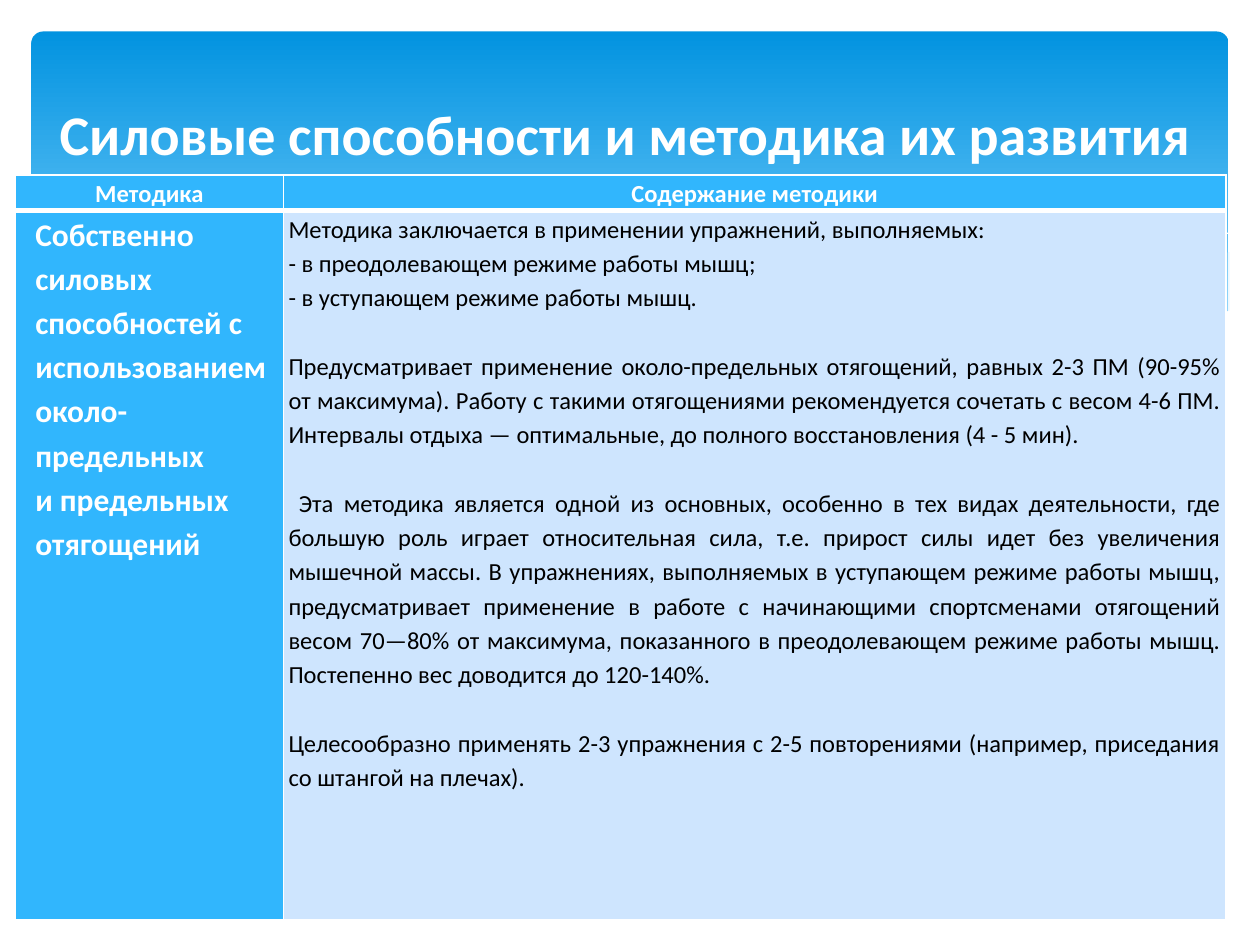
from dataclasses import dataclass

from lxml import etree
from pptx import Presentation
from pptx import util as u
from pptx.dml.color import RGBColor
from pptx.enum import shapes, text
from pptx.oxml.ns import qn


@dataclass(frozen=True)
class Theme:
    font: str = "Calibri"
    white: str = "FFFFFF"
    black: str = "000000"
    banner_top: str = "0293E0"
    banner_bottom: str = "83D3FE"
    wave: str = "C6E7FC"
    accent: str = "31B6FD"
    pale: str = "CEE5FE"
    title_size: float = 32
    method_size: float = 18
    body_size: float = 14
    line_spacing: float = 1.15
    section_gap: float = 19.6


THEME = Theme()
WIDTH, HEIGHT = 10, 7.5

# Content
TITLE = "Силовые способности и методика их развития"
HEADERS = ["Методика", "Содержание методики"]
METHOD = [
    "Собственно силовых способностей с использованием около-предельных",
    "и предельных отягощений",
]
SECTIONS = [
    ["Методика заключается в применении упражнений, выполняемых:",
     "- в преодолевающем режиме работы мышц;",
     "- в уступающем режиме работы мышц."],
    ["Предусматривает применение около-предельных отягощений, равных 2-3 ПМ "
     "(90-95% от максимума). Работу с такими отягощениями рекомендуется сочетать "
     "с весом 4-6 ПМ. Интервалы отдыха — оптимальные, до полного восстановления "
     "(4 - 5 мин)."],
    [" Эта методика является одной из основных, особенно в тех видах деятельности, "
     "где большую роль играет относительная сила, т.е. прирост силы идет без "
     "увеличения мышечной массы. В упражнениях, выполняемых в уступающем режиме "
     "работы мышц, предусматривает применение в работе с начинающими спортсменами "
     "отягощений весом 70—80% от максимума, показанного в преодолевающем режиме "
     "работы мышц. Постепенно вес доводится до 120-140%."],
    ["Целесообразно применять 2-3 упражнения с 2-5 повторениями (например, "
     "приседания со штангой на плечах)."],
]

# Wave outlines in inches: points, fill colour (None for a line), opacity in percent
WAVES = [
    ([(9.76, 2), (9.35, 2.07), (8.61, 2.23), (7.53, 2.48), (6.61, 2.65), (7.19, 2.72),
      (8.03, 2.78), (8.81, 2.73), (9.35, 2.62), (9.76, 2.47)], THEME.wave, 29),
    ([(8.93, 2.73), (8.07, 2.6), (7.06, 2.4), (5.98, 2.14), (5.14, 1.98), (4.42, 1.89),
      (3.61, 1.85), (2.86, 1.91), (3.62, 2.03), (4.49, 2.22), (5.66, 2.48), (6.65, 2.66),
      (7.48, 2.76), (8.28, 2.78)], THEME.wave, 40),
    ([(3.09, 1.95), (3.53, 1.89), (4.16, 1.87), (5.1, 1.92), (6.08, 2.04), (6.95, 2.19),
      (7.95, 2.41), (9.07, 2.72)], None, 100),
    ([(6.13, 2.57), (6.95, 2.35), (7.76, 2.16), (8.66, 1.99), (9.24, 1.9),
      (9.75, 1.85)], None, 100),
    ([(9.77, 2.46), (9.4, 2.59), (8.87, 2.71), (8.09, 2.77), (7.26, 2.72), (6.26, 2.58),
      (5.29, 2.39), (4.47, 2.2), (3.4, 1.97), (2.5, 1.86), (1.77, 1.84), (1.06, 1.89),
      (0.52, 2.01), (0.23, 2.13), (0.23, 3.29), (9.77, 3.29)], THEME.white, 100),
]


def rgb(value):
    return RGBColor.from_string(value)


def inches(*values):
    return [u.Inches(value) for value in values]


def add_text(paragraph, words, size, color, bold, align):
    paragraph.alignment = align
    run = paragraph.add_run()
    run.text = words
    run.font.name, run.font.size, run.font.bold = THEME.font, u.Pt(size), bold
    run.font.color.rgb = rgb(color)


def add_wave(slide, points, color, opacity):
    start, *rest = [inches(*point) for point in points]
    builder = slide.shapes.build_freeform(*start, scale=1.0)
    builder.add_line_segments(rest, close=color is not None)
    wave = builder.convert_to_shape()
    wave.shadow.inherit = False
    if color is None:
        wave.fill.background()
        wave.line.color.rgb = rgb(THEME.white)
        wave.line.width = 0
        return
    wave.line.fill.background()
    wave.fill.solid()
    wave.fill.fore_color.rgb = rgb(color)
    if opacity < 100:
        tone = wave._element.spPr.find(qn("a:solidFill")).find(qn("a:srgbClr"))
        etree.SubElement(tone, qn("a:alpha")).set("val", str(opacity * 1000))


def style_cell(cell, color, bottom_width):
    cell.margin_left = cell.margin_right = u.Inches(0.04)
    cell.margin_top = cell.margin_bottom = 0
    props = cell._tc.get_or_add_tcPr()
    for side, width in zip("LRTB", (1, 1, 1, bottom_width)):
        border = etree.SubElement(props, qn(f"a:ln{side}"), w=str(u.Pt(width)))
        solid = etree.SubElement(border, qn("a:solidFill"))
        etree.SubElement(solid, qn("a:srgbClr"), val=THEME.white)
    cell.fill.solid()
    cell.fill.fore_color.rgb = rgb(color)


def fill_cell(cell, sections, size, color, bold, align, indent=0):
    """Write sections of paragraphs, with a gap above every later section."""
    frame = cell.text_frame
    for number, section in enumerate(sections):
        for position, words in enumerate(section):
            first = number == position == 0
            paragraph = frame.paragraphs[0] if first else frame.add_paragraph()
            paragraph.line_spacing = THEME.line_spacing
            if number and position == 0:
                paragraph.space_before = u.Pt(THEME.section_gap)
            if indent:
                props = paragraph._p.get_or_add_pPr()
                props.set("marL", str(u.Inches(indent)))
                props.set("indent", "0")
            add_text(paragraph, words, size, color, bold, align)


def add_banner(slide):
    margin = WIDTH * 0.025
    banner = slide.shapes.add_shape(
        shapes.MSO_SHAPE.ROUNDED_RECTANGLE,
        *inches(margin, margin, WIDTH - 2 * margin, HEIGHT * 0.36))
    banner.adjustments[0] = 0.034
    banner.shadow.inherit = False
    banner.line.fill.background()
    banner.fill.gradient()
    banner.fill.gradient_angle = 270
    tones = [(0, THEME.banner_top), (0.9, THEME.banner_bottom)]
    for stop, (position, color) in zip(banner.fill.gradient_stops, tones):
        stop.position, stop.color.rgb = position, rgb(color)


def add_methods(slide):
    columns, rows = [2.13, 7.48], [0.28, 5.63]
    table = slide.shapes.add_table(
        2, 2, *inches(0.12, 1.39, sum(columns), sum(rows))).table
    for column, width in zip(table.columns, columns):
        column.width = u.Inches(width)
    for row, height in zip(table.rows, rows):
        row.height = u.Inches(height)

    align = text.PP_ALIGN
    for index, header in enumerate(HEADERS):
        cell = table.cell(0, index)
        style_cell(cell, THEME.accent, 3)
        fill_cell(cell, [[header]], THEME.body_size, THEME.white, True, align.CENTER)
    method, content = table.cell(1, 0), table.cell(1, 1)
    style_cell(method, THEME.accent, 1)
    fill_cell(method, [METHOD], THEME.method_size, THEME.white, True, align.LEFT, 0.12)
    style_cell(content, THEME.pale, 1)
    fill_cell(content, SECTIONS, THEME.body_size, THEME.black, False, align.JUSTIFY)


def add_title(slide):
    title = slide.shapes.title
    title.left, title.top, title.width, title.height = inches(0.2, 0.37, 9.53, 1.37)
    title.text_frame.vertical_anchor = text.MSO_ANCHOR.MIDDLE
    add_text(title.text_frame.paragraphs[0], TITLE, THEME.title_size, THEME.white,
             True, text.PP_ALIGN.CENTER)
    slide.shapes._spTree.append(title._element)  # bring to front


def main():
    deck = Presentation()
    deck.slide_width, deck.slide_height = inches(WIDTH, HEIGHT)
    slide = deck.slides.add_slide(deck.slide_layouts[5])
    add_banner(slide)
    for wave in WAVES:
        add_wave(slide, *wave)
    add_methods(slide)
    add_title(slide)
    deck.save("out.pptx")


if __name__ == "__main__":
    main()
